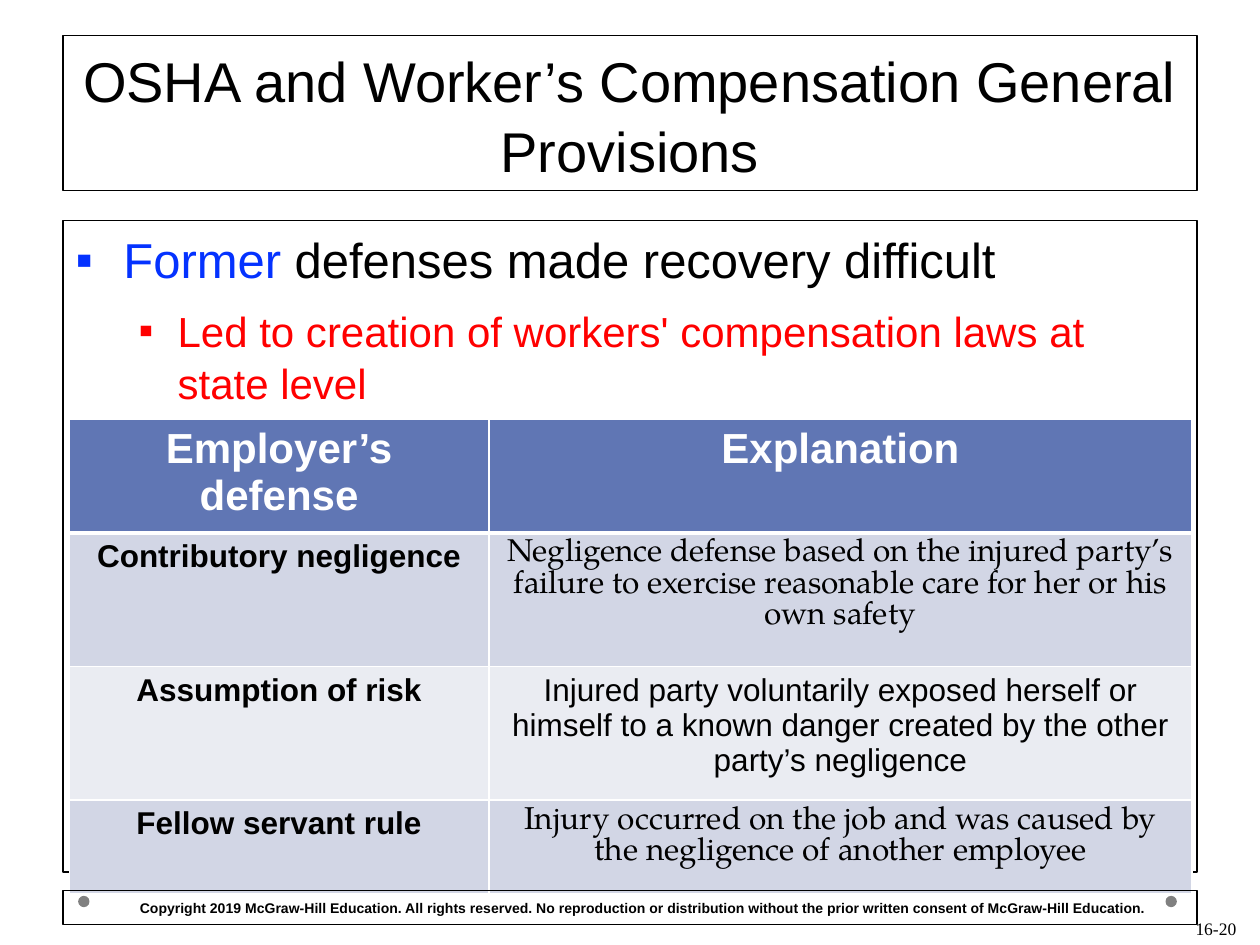
from lxml import etree
from pptx import Presentation
from pptx.dml.color import RGBColor
from pptx.enum.shapes import MSO_SHAPE
from pptx.enum.text import MSO_ANCHOR, MSO_AUTO_SIZE, PP_ALIGN
from pptx.oxml.ns import qn
from pptx.util import Inches, Pt

BLACK, WHITE, GRAY = "000000", "FFFFFF", "808080"
BLUE, RED = "0432FF", "FF0000"
HEADER, BAND_DARK, BAND_LIGHT = "6076B4", "D2D6E5", "EAECF2"
SANS, SERIF, NUMBER_FONT = "Arial", "TeX Gyre Pagella", "Times New Roman"


def rgb(color):
    return RGBColor.from_string(color)


def add_text(p, text, size=18, color=BLACK, font=SANS, bold=False):
    r = p.add_run()
    r.text = text
    r.font.size = Pt(size)
    r.font.name = font
    r.font.bold = bold
    r.font.color.rgb = rgb(color)


def set_bullet(p, char, left, hanging):
    pPr = p._p.get_or_add_pPr()
    pPr.set("marL", str(Inches(left)))
    pPr.set("indent", str(-Inches(hanging)))
    etree.SubElement(pPr, qn("a:buChar")).set("char", char)


def set_borders(cell, color, width, bottom):
    """Draw all four edges; call before the cell gets its fill."""
    tcPr = cell._tc.get_or_add_tcPr()
    for side in "LRTB":
        ln = etree.SubElement(tcPr, qn(f"a:ln{side}"))
        ln.set("w", str(Pt(bottom if side == "B" else width)))
        fill = etree.SubElement(ln, qn("a:solidFill"))
        etree.SubElement(fill, qn("a:srgbClr")).set("val", color)


class SlideBuilder:
    def __init__(self, s):
        self.s = s
        self.line_color = BLACK
        self.line_width = Pt(0.75)
        self.line_spacing = 1.05

    def outline(self, sp):
        sp.line.color.rgb = rgb(self.line_color)
        sp.line.width = self.line_width

    def placeholder(self, sp, left, top, width, height):
        sp.left, sp.top = Inches(left), Inches(top)
        sp.width, sp.height = Inches(width), Inches(height)
        self.outline(sp)
        sp.text_frame.auto_size = MSO_AUTO_SIZE.NONE
        return sp.text_frame

    def title(self, text, *box):
        tf = self.placeholder(self.s.shapes.title, *box)
        tf.vertical_anchor = MSO_ANCHOR.BOTTOM
        p = tf.paragraphs[0]
        p.alignment = PP_ALIGN.CENTER
        p.line_spacing = self.line_spacing
        add_text(p, text, size=32)

    def bullets(self, items, *box):
        """items: (level, left, hanging, size, [(text, color), ...])"""
        tf = self.placeholder(self.s.placeholders[1], *box)
        for i, (level, left, hanging, size, runs) in enumerate(items):
            p = tf.add_paragraph() if i else tf.paragraphs[0]
            p.level = level
            set_bullet(p, "▪", left, hanging)
            p.space_before = Pt(8 if i else 0)
            p.line_spacing = self.line_spacing
            for text, color in runs:
                add_text(p, text, size=size, color=color)

    def shape(self, kind, left, top, width, height, fill=None):
        sp = self.s.shapes.add_shape(kind, Inches(left), Inches(top),
                                     Inches(width), Inches(height))
        sp.shadow.inherit = False
        if fill:
            sp.fill.solid()
            sp.fill.fore_color.rgb = rgb(fill)
            sp.line.fill.background()
        else:
            sp.fill.background()
            self.outline(sp)
        return sp

    def footer(self, text, *box):
        tf = self.shape(MSO_SHAPE.RECTANGLE, *box).text_frame
        tf.word_wrap = True
        tf.margin_left = Inches(0.61)
        tf.vertical_anchor = MSO_ANCHOR.MIDDLE
        p = tf.paragraphs[0]
        p.alignment = PP_ALIGN.LEFT
        add_text(p, text, size=8, bold=True)

    def page_number(self, text, left, top, width, height):
        tf = self.s.shapes.add_textbox(Inches(left), Inches(top),
                                       Inches(width), Inches(height)).text_frame
        tf.word_wrap = True
        tf.vertical_anchor = MSO_ANCHOR.BOTTOM
        p = tf.paragraphs[0]
        p.alignment = PP_ALIGN.RIGHT
        add_text(p, text, size=10, font=NUMBER_FONT)

    def cell(self, cell, text, fill, bottom=1, **fmt):
        set_borders(cell, WHITE, 1, bottom)
        cell.fill.solid()
        cell.fill.fore_color.rgb = rgb(fill)
        p = cell.text_frame.paragraphs[0]
        p.alignment = PP_ALIGN.CENTER
        if fmt.get("font") == SERIF:
            p.line_spacing = Pt(18)
        add_text(p, text, **fmt)

    def table(self, headings, rows, left, top, col_widths, row_heights):
        table = self.s.shapes.add_table(
            len(row_heights), len(col_widths), Inches(left), Inches(top),
            Inches(sum(col_widths)), Inches(sum(row_heights))).table
        for col, width in zip(table.columns, col_widths):
            col.width = Inches(width)
        for row, height in zip(table.rows, row_heights):
            row.height = Inches(height)
        for c, text in enumerate(headings):
            self.cell(table.cell(0, c), text, HEADER, bottom=3,
                      size=24, color=WHITE, bold=True)
        for r, (defense, explanation, font) in enumerate(rows, 1):
            band = BAND_DARK if r % 2 else BAND_LIGHT
            self.cell(table.cell(r, 0), defense, band, bold=True)
            self.cell(table.cell(r, 1), explanation, band, font=font)


def main():
    prs = Presentation()
    prs.slide_width, prs.slide_height = Inches(10), Inches(7.5)
    b = SlideBuilder(prs.slides.add_slide(prs.slide_layouts[1]))

    for left in (9.25, 0.62):
        b.shape(MSO_SHAPE.OVAL, left, 7.11, 0.09, 0.09, fill=GRAY)
    b.page_number("16-20", 7.58, 7, 2.33, 0.5)
    b.title("OSHA and Worker’s Compensation General Provisions",
            0.5, 0.28, 9, 1.23)
    b.bullets([
        (0, 0.38, 0.38, 28, [("Former ", BLUE),
                             ("defenses made recovery difficult", BLACK)]),
        (1, 0.81, 0.31, 24, [("Led to creation of workers' compensation laws "
                              "at state level", RED)]),
    ], 0.5, 1.75, 9, 5.17)
    b.table(
        ["Employer’s defense", "Explanation"],
        [("Contributory negligence",
          "Negligence defense based on the injured party’s failure to "
          "exercise reasonable care for her or his own safety", SERIF),
         ("Assumption of risk",
          "Injured party voluntarily exposed herself or himself to a known "
          "danger created by the other party’s negligence", SANS),
         ("Fellow servant rule",
          "Injury occurred on the job and was caused by the negligence of "
          "another employee", SERIF)],
        0.55, 3.33, [3.33, 5.58], [0.72, 1.06, 1.06, 0.74])
    b.footer("Copyright 2019 McGraw-Hill Education. All rights reserved. "
             "No reproduction or distribution without the prior written "
             "consent of McGraw-Hill Education.", 0.5, 7.07, 9, 0.27)
    prs.save("out.pptx")


if __name__ == "__main__":
    main()
